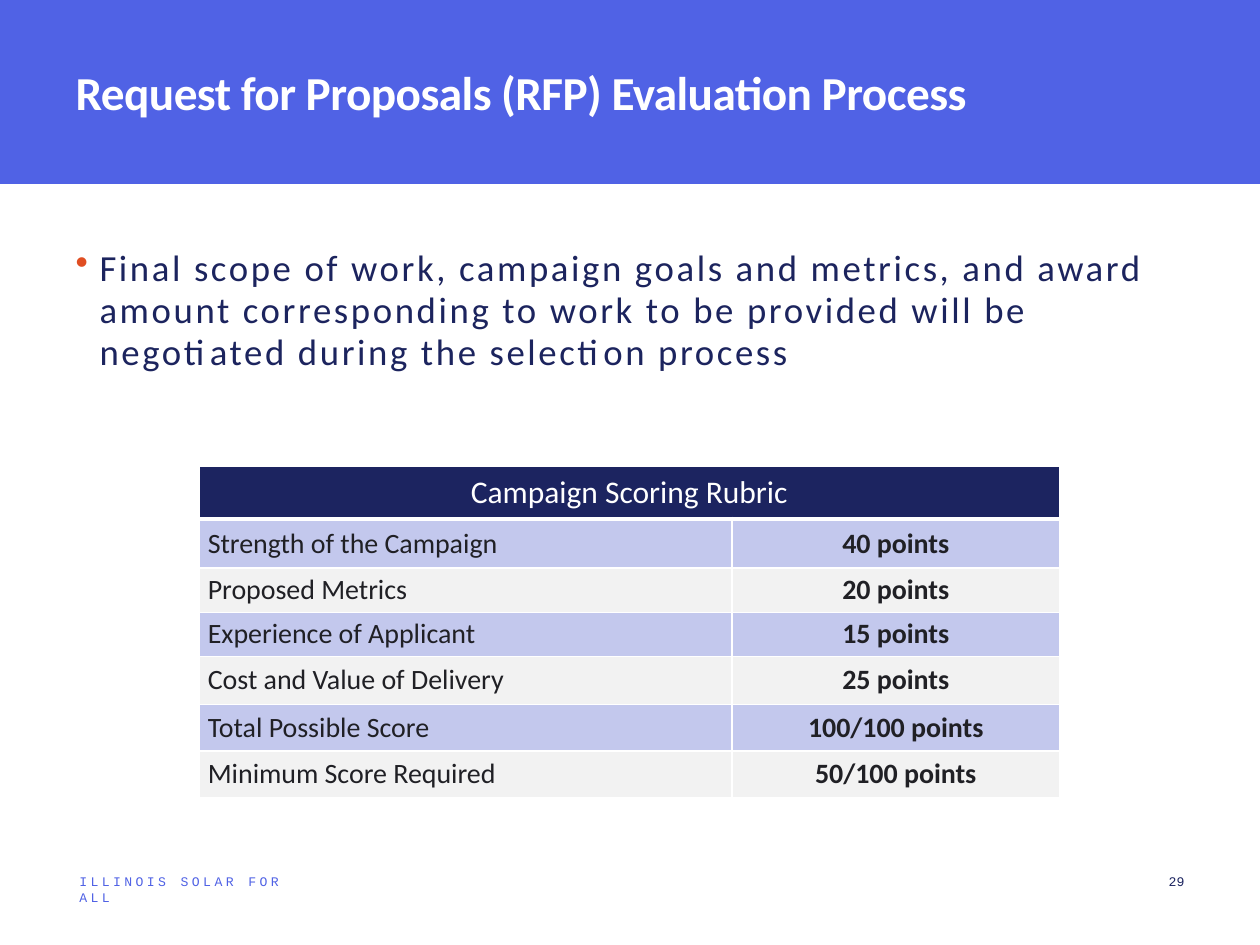
"""Build the RFP evaluation slide with its campaign scoring rubric."""
from dataclasses import dataclass
from typing import NamedTuple, Optional

from lxml.etree import SubElement
from pptx import Presentation
from pptx.dml.color import RGBColor as RGB
from pptx.enum.shapes import MSO_SHAPE as Shape
from pptx.enum.text import MSO_ANCHOR as Anchor, PP_ALIGN as Align
from pptx.oxml.ns import qn
from pptx.util import Inches, Pt


@dataclass(frozen=True)
class Theme:
    blue: str = "5062E5"
    navy: str = "1C2460"
    body_ink: str = "1C245E"
    ink: str = "202025"
    accent: str = "E04E22"
    white: str = "FFFFFF"
    bands: tuple = ("C3C8ED", "F2F2F2")
    sans: str = "Calibri"
    mono: str = "Courier New"
    title_size: float = 27
    body_size: float = 21
    header_size: float = 18
    cell_size: float = 16
    footer_size: float = 7.5


class Style(NamedTuple):
    size: float
    color: str
    font: str
    bold: bool = False
    spacing: float = 0


class Block(NamedTuple):
    text: str
    box: tuple
    insets: tuple
    style: Style
    align: Align = Align.LEFT
    fill: Optional[str] = None


class Score(NamedTuple):
    criterion: str
    points: str


T = Theme()
TITLE = Block("Request for Proposals (RFP) Evaluation Process",
              (0, 0, 10, 1.46), (0.6, 0.5, 0.6, 0.5),
              Style(T.title_size, T.white, T.sans, True, -0.3), fill=T.blue)
BODY = Block("Final scope of work, campaign goals and metrics, and award amount "
             "corresponding to work to be provided will be negotiated during "
             "the selection process",
             (0, 1.46, 10, 1.79), (0.6, 0.6, 0.6, 0.6),
             Style(T.body_size, T.body_ink, T.sans, spacing=1.5))
FOOTER = Block("ILLINOIS SOLAR FOR ALL", (0.63, 6.93, 1.87, 0.13), (0, 0, 0, 0),
               Style(T.footer_size, T.blue, T.mono, spacing=1.9))
NUMBER = Block("29", (9.08, 6.93, 0.92, 0.13), (0, 0, 0.6, 0),
               Style(T.footer_size, T.navy, T.mono), Align.RIGHT)
SCORES = [
    Score("Strength of the Campaign", "40 points"),
    Score("Proposed Metrics", "20 points"),
    Score("Experience of Applicant", "15 points"),
    Score("Cost and Value of Delivery", "25 points"),
    Score("Total Possible Score", "100/100 points"),
    Score("Minimum Score Required", "50/100 points"),
]
COLUMNS = (4.23, 2.6)
ROWS = (0.42, 0.39, 0.35, 0.35, 0.38, 0.37, 0.37)


def format_text(p, style: Style, align: Align) -> None:
    """Apply one style to every run of a paragraph."""
    p.alignment = align
    for r in p.runs:
        r.font.size = Pt(style.size)
        r.font.name = style.font
        r.font.bold = style.bold
        r.font.color.rgb = RGB.from_string(style.color)
        if style.spacing:
            r.font._element.set("spc", str(round(style.spacing * 100)))


def add_block(slide, block: Block):
    """Add a text box, or a filled rectangle, and return its paragraph."""
    box = [Inches(v) for v in block.box]
    if block.fill:
        sp = slide.shapes.add_shape(Shape.RECTANGLE, *box)
        sp.shadow.inherit = False
        sp.fill.solid()
        sp.fill.fore_color.rgb = RGB.from_string(block.fill)
        sp.line.fill.background()
    else:
        sp = slide.shapes.add_textbox(*box)
    tf = sp.text_frame
    tf.word_wrap = True
    tf.vertical_anchor = Anchor.TOP
    (tf.margin_left, tf.margin_top,
     tf.margin_right, tf.margin_bottom) = [Inches(v) for v in block.insets]
    tf.text = block.text
    p = tf.paragraphs[0]
    format_text(p, block.style, block.align)
    return p


def add_bullet(p, color: str, indent: float) -> None:
    """Give a paragraph a coloured bullet with a hanging indent."""
    pPr = p._p.get_or_add_pPr()
    pPr.set("marL", str(Inches(indent)))
    pPr.set("indent", str(-Inches(indent)))
    SubElement(SubElement(pPr, qn("a:buClr")), qn("a:srgbClr"), val=color)
    SubElement(pPr, qn("a:buChar"), char="•")


def set_borders(cell, color: str, bottom: float = 1) -> None:
    """Draw the four borders of a cell."""
    tcPr = cell._tc.get_or_add_tcPr()
    for side, width in (("L", 1), ("R", 1), ("T", 1), ("B", bottom)):
        ln = SubElement(tcPr, qn(f"a:ln{side}"), w=str(Pt(width)))
        SubElement(SubElement(ln, qn("a:solidFill")), qn("a:srgbClr"), val=color)


def fill_cell(cell, text: str, style: Style, align: Align, fill: str,
              bottom: float = 1) -> None:
    """Write and format one table cell."""
    set_borders(cell, T.white, bottom)
    cell.fill.solid()
    cell.fill.fore_color.rgb = RGB.from_string(fill)
    cell.vertical_anchor = Anchor.MIDDLE
    cell.margin_left = cell.margin_right = Inches(0.07)
    cell.margin_top = cell.margin_bottom = 0
    cell.text_frame.text = text
    p = cell.text_frame.paragraphs[0]
    p.space_after = Pt(8)
    format_text(p, style, align)


def add_rubric(slide) -> None:
    """Add the scoring table with its merged heading."""
    table = slide.shapes.add_table(
        len(ROWS), len(COLUMNS), Inches(1.58), Inches(3.7),
        Inches(sum(COLUMNS)), Inches(sum(ROWS))).table
    for column, width in zip(table.columns, COLUMNS):
        column.width = Inches(width)
    for row, height in zip(table.rows, ROWS):
        row.height = Inches(height)
    heading = Style(T.header_size, T.white, T.sans)
    for col, text in enumerate(("Campaign Scoring Rubric", "")):
        fill_cell(table.cell(0, col), text, heading, Align.CENTER, T.navy, 3)
    table.cell(0, 0).merge(table.cell(0, 1))
    for row, score in enumerate(SCORES, 1):
        fill = T.bands[(row - 1) % len(T.bands)]
        fill_cell(table.cell(row, 0), score.criterion,
                  Style(T.cell_size, T.ink, T.sans), Align.LEFT, fill)
        fill_cell(table.cell(row, 1), score.points,
                  Style(T.cell_size, T.ink, T.sans, True), Align.CENTER, fill)


def main() -> None:
    """Assemble and save the slide."""
    prs = Presentation()
    prs.slide_width, prs.slide_height = Inches(10), Inches(7.5)
    slide = prs.slides.add_slide(prs.slide_layouts[6])
    for block in (FOOTER, NUMBER):
        add_block(slide, block)
    p = add_block(slide, BODY)
    add_bullet(p, T.accent, 0.19)
    p.line_spacing = Pt(24)
    add_block(slide, TITLE)
    add_rubric(slide)
    prs.save("out.pptx")


if __name__ == "__main__":
    main()
